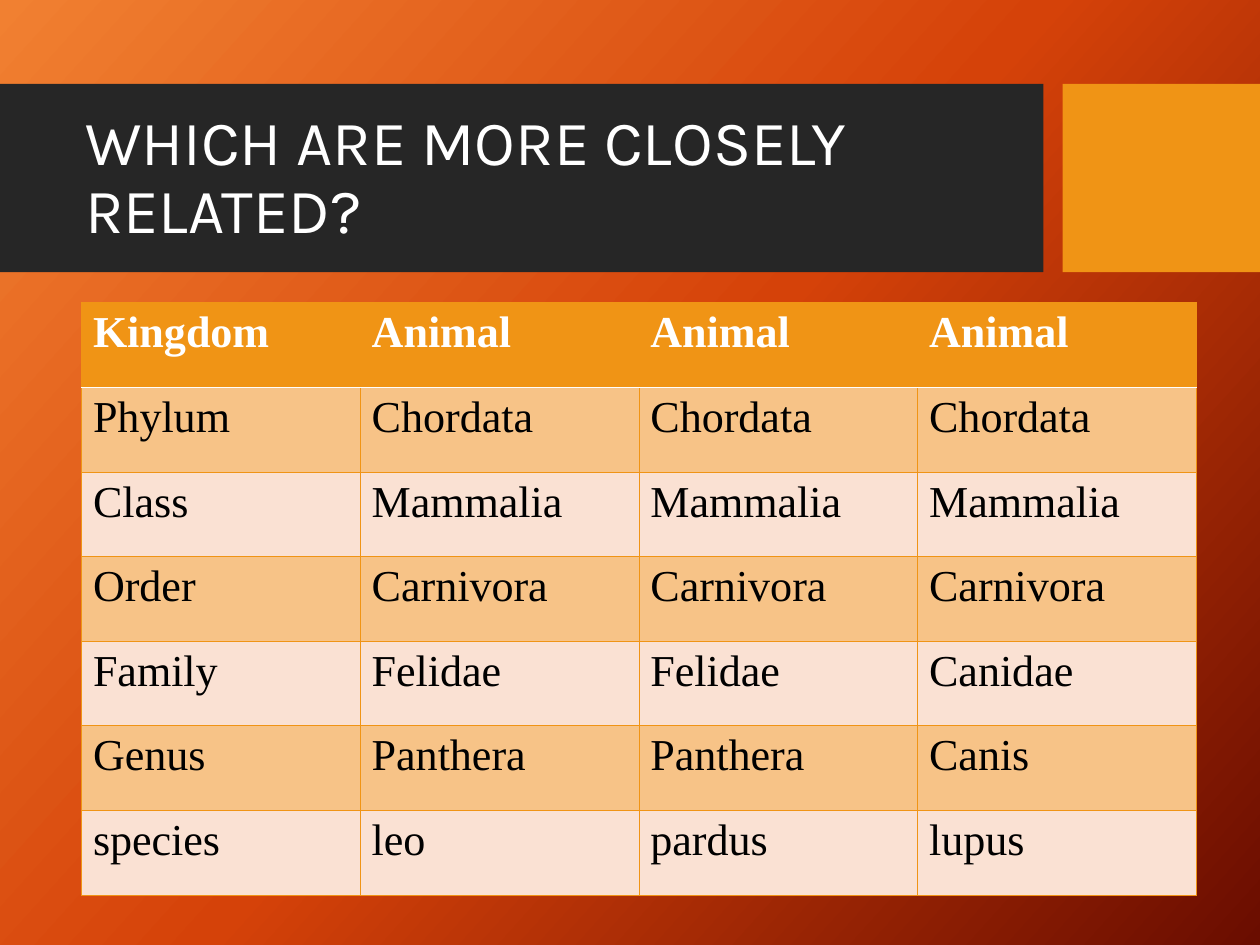
from copy import deepcopy
from dataclasses import dataclass

from lxml import etree
from pptx import Presentation
from pptx.dml.color import RGBColor
from pptx.enum.shapes import MSO_SHAPE
from pptx.enum.text import MSO_ANCHOR, MSO_AUTO_SIZE, PP_ALIGN
from pptx.oxml.ns import qn
from pptx.util import Inches, Pt

RECT = MSO_SHAPE.RECTANGLE
MIDDLE = MSO_ANCHOR.MIDDLE
NO_FIT = MSO_AUTO_SIZE.NONE
LEFT = PP_ALIGN.LEFT


@dataclass(frozen=True)
class Theme:
    """Colours, fonts and type sizes of the slide."""
    dark: str = "262626"
    gold: str = "F09415"
    tan: str = "F7C387"
    pale: str = "FAE1D3"
    white: str = "FFFFFF"
    black: str = "000000"
    glow: tuple = ((0, "F18031"), (0.5, "D54209"), (1, "6A0D00"))
    angle: int = 42
    head_font: str = "Karla"
    body_font: str = "Times New Roman"
    head_size: int = 40
    body_size: int = 28


THEME = Theme()
WIDTH, HEIGHT = 11.11, 8.33
TITLE = "WHICH ARE MORE CLOSELY RELATED?"
RANKS = (
    ("Kingdom", "Animal", "Animal", "Animal"),
    ("Phylum", "Chordata", "Chordata", "Chordata"),
    ("Class", "Mammalia", "Mammalia", "Mammalia"),
    ("Order", "Carnivora", "Carnivora", "Carnivora"),
    ("Family", "Felidae", "Felidae", "Canidae"),
    ("Genus", "Panthera", "Panthera", "Canis"),
    ("species", "leo", "pardus", "lupus"),
)


def write(frame, text, *, font, size, color, bold=False, lead=1.0):
    """Put one formatted paragraph in a text frame."""
    para = frame.paragraphs[0]
    para.alignment = LEFT
    para.line_spacing = lead
    run = para.add_run()
    run.text = text
    run.font.name = font
    run.font.size = Pt(size)
    run.font.bold = bold
    run.font.color.rgb = RGBColor.from_string(color)


def paint(slide):
    """Fill the background with the three-stop gradient."""
    fill = slide.background.fill
    fill.gradient()
    fill.gradient_angle = 360 - THEME.angle
    stops = slide.element.find(".//" + qn("a:gsLst"))
    stops.append(deepcopy(stops[0]))
    for stop, (place, color) in zip(fill.gradient_stops, THEME.glow):
        stop.position = place
        stop.color.rgb = RGBColor.from_string(color)


def block(slide, left, top, width, height, color):
    """Draw a plain filled rectangle."""
    shape = slide.shapes.add_shape(
        RECT, Inches(left), Inches(top), Inches(width), Inches(height))
    shape.shadow.inherit = False
    shape.fill.solid()
    shape.fill.fore_color.rgb = RGBColor.from_string(color)
    shape.line.fill.background()


def banner(slide, left, top, width, height):
    """Draw the dark band, the gold block and the title on them."""
    band, gap = 9.2, 0.17
    block(slide, left, top, band, height, THEME.dark)
    block(slide, left + band + gap, top, width - band - gap, height, THEME.gold)
    title = slide.shapes.title
    slide.shapes.element.append(title.element)
    title.left, title.top = Inches(left + 0.65), Inches(top + 0.18)
    title.width, title.height = Inches(8.38), Inches(1.31)
    frame = title.text_frame
    frame.word_wrap = True
    frame.auto_size = NO_FIT
    frame.vertical_anchor = MIDDLE
    write(frame, TITLE, font=THEME.head_font, size=THEME.head_size,
          color=THEME.white, lead=0.9)


def edge(cell, side, color, width):
    """Add one border line to a cell."""
    line = etree.SubElement(cell._tc.get_or_add_tcPr(), qn("a:ln" + side),
                            w=str(Pt(width)))
    solid = etree.SubElement(line, qn("a:solidFill"))
    etree.SubElement(solid, qn("a:srgbClr"), val=color)


def ranks(slide, left, top, width, height):
    """Draw the table of ranks with a gold head and striped rows."""
    table = slide.shapes.add_table(
        len(RANKS), len(RANKS[0]), Inches(left), Inches(top),
        Inches(width), Inches(height)).table
    for row, names in enumerate(RANKS):
        head = row == 0
        color = THEME.gold if head else (THEME.pale, THEME.tan)[row % 2]
        rules = {side: (THEME.gold, 0.75) for side in "LRTB"}
        if row < 2:
            rules["B" if head else "T"] = (THEME.white, 1)
        for col, name in enumerate(names):
            cell = table.cell(row, col)
            for side, rule in rules.items():
                edge(cell, side, *rule)
            cell.fill.solid()
            cell.fill.fore_color.rgb = RGBColor.from_string(color)
            write(cell.text_frame, name, font=THEME.body_font,
                  size=THEME.body_size, bold=head,
                  color=THEME.white if head else THEME.black)


def main():
    """Build the slide and save it."""
    deck = Presentation()
    deck.slide_width, deck.slide_height = Inches(WIDTH), Inches(HEIGHT)
    slide = deck.slides.add_slide(deck.slide_layouts[5])
    paint(slide)
    banner(slide, 0, 0.74, WIDTH, 1.66)
    ranks(slide, 0.72, 2.67, 9.83, 5.22)
    deck.save("out.pptx")


if __name__ == "__main__":
    main()
